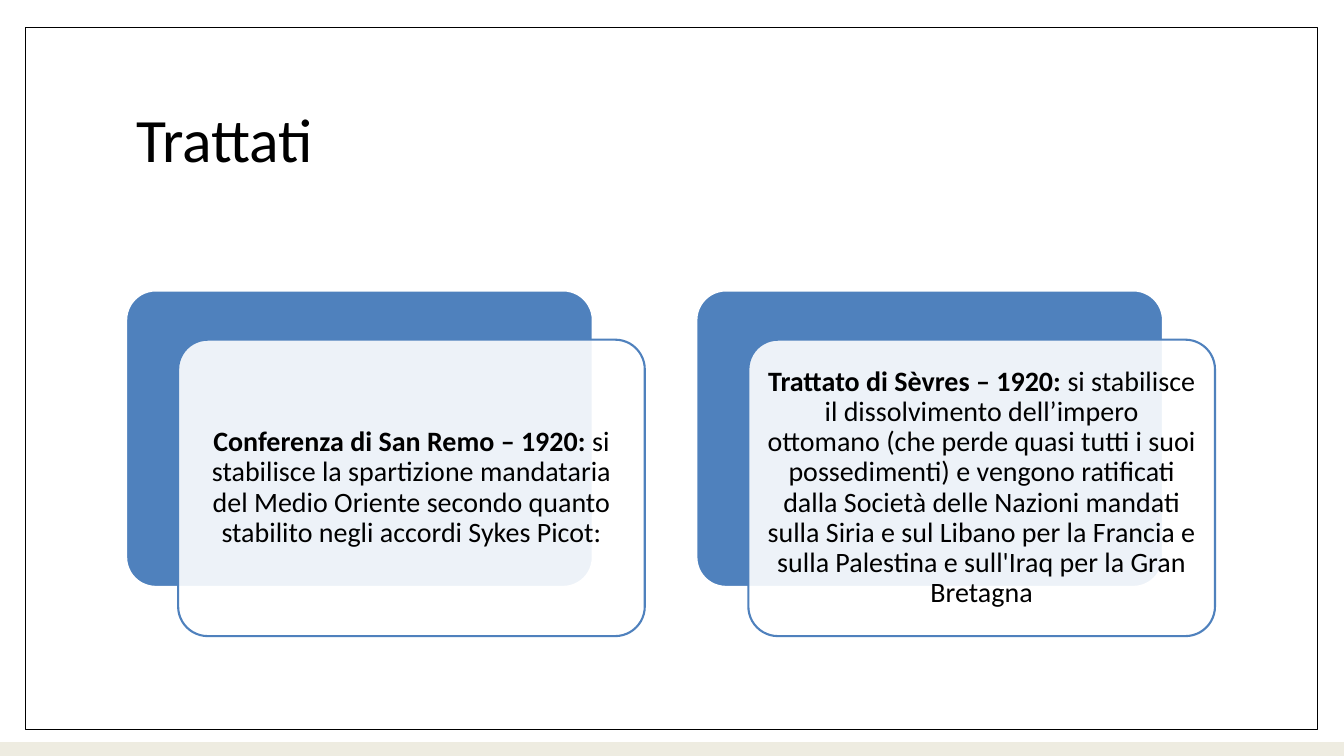
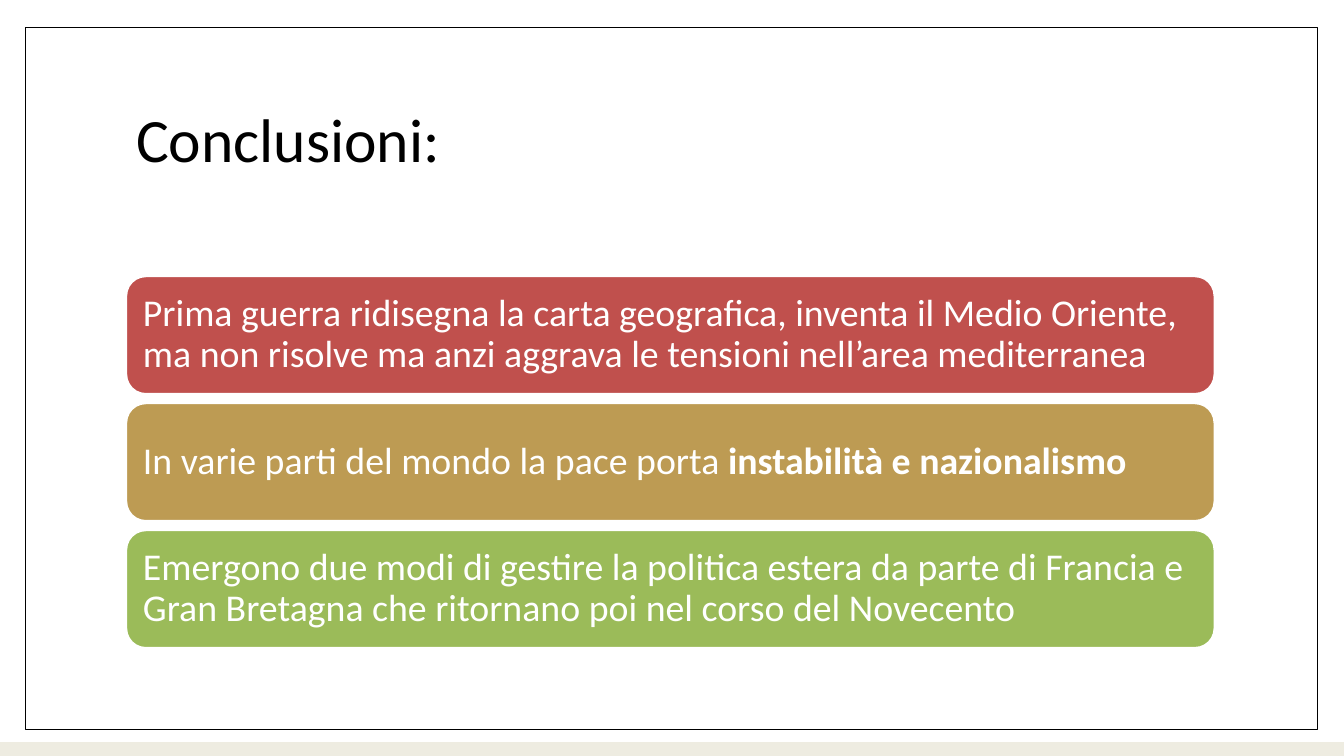
"""Build two slides on the treaties after the First World War and their outcome."""
import pptx
import pptx.dml.color
import pptx.enum.shapes
import pptx.enum.text
import pptx.oxml
import pptx.oxml.ns
import pptx.util

Cm = pptx.util.Cm
Pt = pptx.util.Pt
Shape = pptx.enum.shapes.MSO_SHAPE
Align = pptx.enum.text.PP_ALIGN
Anchor = pptx.enum.text.MSO_ANCHOR

COLORS = {
    "black": "000000",
    "white": "FFFFFF",
    "cream": "EEECE1",
    "blue": "4F81BD",
    "red": "C0504D",
    "ochre": "BD9B53",
    "green": "9BBB59",
}
WIDTH, HEIGHT = 33.87, 19.05
LEFT, CONTENT_WIDTH = 3.18, 27.43
BACK_SHAPE_INDEX = 2

TREATIES = [
    ("Conferenza di San Remo – 1920: ",
     "si stabilisce la spartizione mandataria del Medio Oriente secondo quanto "
     "stabilito negli accordi Sykes Picot:"),
    ("Trattato di Sèvres – 1920: ",
     "si stabilisce il dissolvimento dell’impero ottomano (che perde quasi tutti "
     "i suoi possedimenti) e vengono ratificati dalla Società delle Nazioni mandati "
     "sulla Siria e sul Libano per la Francia e sulla Palestina e sull'Iraq per la "
     "Gran Bretagna"),
]
CONCLUSIONS = [
    ("red", [("Prima guerra ridisegna la carta geografica, inventa il Medio Oriente, "
              "ma non risolve ma anzi aggrava le tensioni nell’area mediterranea", False)]),
    ("ochre", [("In varie parti del mondo la pace porta ", False),
               ("instabilità e nazionalismo", True)]),
    ("green", [("Emergono due modi di gestire la politica estera da parte di Francia e "
                "Gran Bretagna che ritornano poi nel corso del Novecento", False)]),
]


class Deck:
    """Hold the shared style and the current slide."""

    font = "Calibri"

    def __init__(self):
        """Open a wide presentation whose layout carries the bottom band."""
        self.presentation = pptx.Presentation()
        self.presentation.slide_width = Cm(WIDTH)
        self.presentation.slide_height = Cm(HEIGHT)
        self.layout = self.presentation.slide_layouts[5]
        self.slide = None
        self.has_band = False

    def color(self, name):
        """Return the named colour."""
        return pptx.dml.color.RGBColor.from_string(COLORS[name])

    def add_slide(self, title):
        """Start a slide with its frame and title."""
        self.slide = self.presentation.slides.add_slide(self.layout)
        if not self.has_band:
            self.add_band()
        frame = self.add_box(Shape.RECTANGLE, 0.64, 0.69, 32.56, 17.7, "white", "black", 1)
        self.slide.shapes.element.insert(BACK_SHAPE_INDEX, frame.element)
        placeholder = self.slide.shapes.title
        placeholder.left, placeholder.top = Cm(LEFT), Cm(1.7)
        placeholder.width, placeholder.height = Cm(CONTENT_WIDTH), Cm(3.76)
        self.set_text(placeholder, [(title, False)], 44, "black", Align.LEFT, 0.25)

    def add_band(self):
        """Place the bottom band on the layout."""
        band = self.add_box(Shape.RECTANGLE, 0, 18.7, WIDTH, 0.35, "cream")
        band.element.nvSpPr.cNvPr.set("id", "100")
        self.layout.shapes.element.insert(BACK_SHAPE_INDEX, band.element)
        self.has_band = True

    def add_box(self, kind, left, top, width, height, fill, line=None, weight=1.5):
        """Add a filled shape with an optional outline."""
        shape = self.slide.shapes.add_shape(kind, Cm(left), Cm(top), Cm(width), Cm(height))
        shape.shadow.inherit = False
        shape.fill.solid()
        shape.fill.fore_color.rgb = self.color(fill)
        if line:
            shape.line.color.rgb = self.color(line)
            shape.line.width = Pt(weight)
        else:
            shape.line.fill.background()
        return shape

    def set_opacity(self, shape, percent):
        """Make the fill of a shape partly transparent."""
        fill = shape.element.spPr.find(pptx.oxml.ns.qn("a:solidFill"))
        alpha = pptx.oxml.parse_xml(
            f'<a:alpha {pptx.oxml.ns.nsdecls("a")} val="{percent * 1000}"/>')
        fill[0].append(alpha)

    def set_text(self, shape, runs, size, color, alignment, margin):
        """Fill a shape with one paragraph of plain and bold runs."""
        frame = shape.text_frame
        frame.word_wrap = True
        frame.auto_size = pptx.enum.text.MSO_AUTO_SIZE.NONE
        frame.vertical_anchor = Anchor.MIDDLE
        frame.margin_left = frame.margin_right = Cm(margin)
        frame.margin_top = frame.margin_bottom = Cm(margin)
        paragraph = frame.paragraphs[0]
        paragraph.alignment = alignment
        paragraph.line_spacing = 0.9
        paragraph.font.name = self.font
        paragraph.font.size = Pt(size)
        paragraph.font.color.rgb = self.color(color)
        for text, bold in runs:
            run = paragraph.add_run()
            run.text = text
            run.font.bold = bold

    def add_card(self, left, heading, body):
        """Add a translucent text card over a blue one."""
        top, width, height = 7.32, 11.76, 7.47
        back = self.add_box(Shape.ROUNDED_RECTANGLE, left, top, width, height, "blue", "white")
        front = self.add_box(Shape.ROUNDED_RECTANGLE, left + 1.31, top + 1.24,
                             width, height, "white", "blue")
        for shape in (back, front):
            shape.adjustments[0] = 0.1
        self.set_opacity(front, 90)
        self.set_text(front, [(heading, True), (body, False)], 20, "black", Align.CENTER, 0.21)

    def add_bar(self, top, color, runs):
        """Add a full-width coloured statement."""
        bar = self.add_box(Shape.ROUNDED_RECTANGLE, LEFT, top, CONTENT_WIDTH, 2.97,
                           color, "white")
        self.set_text(bar, runs, 27, "white", Align.LEFT, 0.28)


def main():
    """Build and save both slides."""
    deck = Deck()
    deck.add_slide("Trattati")
    for index, (heading, body) in enumerate(TREATIES):
        deck.add_card(LEFT + index * 14.37, heading, body)
    deck.add_slide("Conclusioni:")
    for index, (color, runs) in enumerate(CONCLUSIONS):
        deck.add_bar(6.96 + index * 3.2, color, runs)
    deck.presentation.save("out.pptx")


if __name__ == "__main__":
    main()
